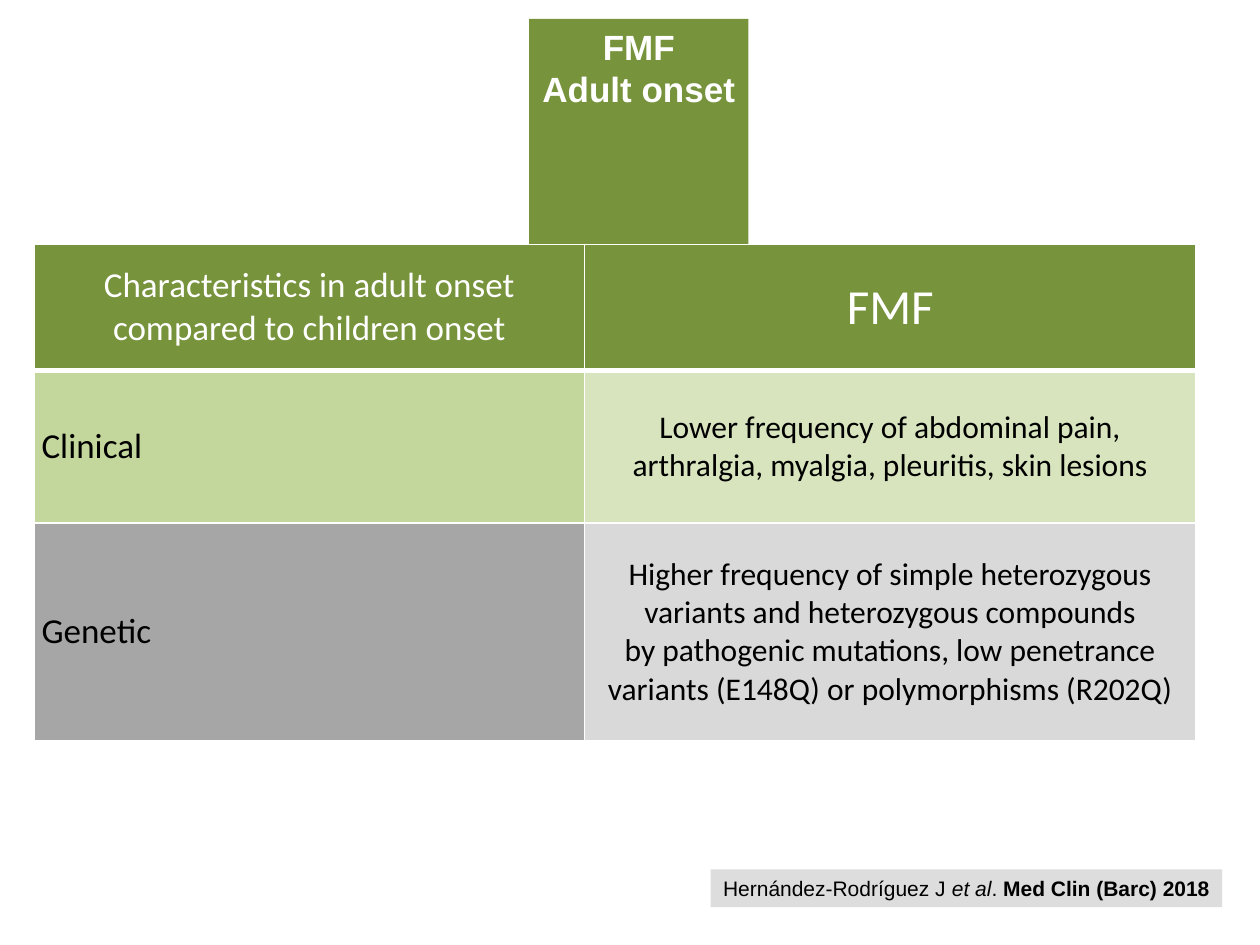
import pptx
import pptx.util
import pptx.dml.color
import pptx.enum.text
import pptx.enum.shapes
import pptx.oxml
import pptx.oxml.ns
import lxml.etree

Inches = pptx.util.Inches
Pt = pptx.util.Pt
RGBColor = pptx.dml.color.RGBColor
ALIGN = pptx.enum.text.PP_ALIGN
ANCHOR = pptx.enum.text.MSO_ANCHOR
AUTO_SIZE = pptx.enum.text.MSO_AUTO_SIZE

WHITE = RGBColor(0xFF, 0xFF, 0xFF)
BLACK = RGBColor(0, 0, 0)
GREEN = RGBColor(0x77, 0x93, 0x3C)
MID_GREEN = RGBColor(0xC3, 0xD6, 0x9B)
PALE_GREEN = RGBColor(0xD7, 0xE4, 0xBD)
MID_GRAY = RGBColor(0xA6, 0xA6, 0xA6)
PALE_GRAY = RGBColor(0xD9, 0xD9, 0xD9)
CITATION_GRAY = RGBColor(0xDD, 0xDD, 0xDD)

HEADING = "FMF\nAdult onset"
COLUMN_WIDTHS = [4.37, 4.85]
ROW_HEIGHTS = [1, 1.21, 1.73]
ROWS = [
    [("Characteristics in adult onset\ncompared to children onset", 20, WHITE, GREEN, ALIGN.CENTER),
     ("FMF", 28, WHITE, GREEN, ALIGN.CENTER)],
    [("Clinical", 20, BLACK, MID_GREEN, ALIGN.LEFT),
     ("Lower frequency of abdominal pain, arthralgia, myalgia, pleuritis, skin lesions",
      18, BLACK, PALE_GREEN, ALIGN.CENTER)],
    [("Genetic", 20, BLACK, MID_GRAY, ALIGN.LEFT),
     ("Higher frequency of simple heterozygous variants and heterozygous compounds\n"
      "by pathogenic mutations, low penetrance variants (E148Q) or polymorphisms (R202Q)",
      18, BLACK, PALE_GRAY, ALIGN.CENTER)],
]
CITATION = [
    ("Hernández-Rodríguez J ", False, False),
    ("et al", False, True),
    (". ", False, False),
    ("Med Clin (Barc) 2018", True, False),
]


def style_run(run, font_name, size, color, bold=False, italic=False):
    run.font.name = font_name
    run.font.size = Pt(size)
    run.font.color.rgb = color
    run.font.bold = bold
    run.font.italic = italic


def write_text(frame, text, font_name, size, color, alignment, bold=False):
    frame.text = text
    for paragraph in frame.paragraphs:
        paragraph.alignment = alignment
        for run in paragraph.runs:
            style_run(run, font_name, size, color, bold)


def add_borders(cell, bottom_width):
    properties = cell._tc.get_or_add_tcPr()
    widths = {"lnL": 1, "lnR": 1, "lnT": 1, "lnB": bottom_width}
    for position, (side, width) in enumerate(widths.items()):
        border = pptx.oxml.parse_xml(
            f'<a:{side} {pptx.oxml.ns.nsdecls("a")} w="{Pt(width)}">'
            f'<a:solidFill><a:srgbClr val="{WHITE}"/></a:solidFill></a:{side}>')
        properties.insert(position, border)


def add_heading(slide):
    heading = slide.shapes.title
    heading.left, heading.top = Inches(4.2), Inches(0.15)
    heading.width, heading.height = Inches(1.74), Inches(0.77)
    heading.fill.solid()
    heading.fill.fore_color.rgb = GREEN
    frame = heading.text_frame
    write_text(frame, HEADING, "Arial", 20, WHITE, ALIGN.CENTER, bold=True)
    frame.vertical_anchor = ANCHOR.TOP
    frame.word_wrap = False
    frame.auto_size = AUTO_SIZE.SHAPE_TO_FIT_TEXT


def add_comparison(slide):
    comparison = slide.shapes.add_table(
        len(ROWS), len(COLUMN_WIDTHS), Inches(0.27), Inches(1.94),
        Inches(sum(COLUMN_WIDTHS)), Inches(sum(ROW_HEIGHTS))).table
    comparison.horz_banding = False
    for column, width in zip(comparison.columns, COLUMN_WIDTHS):
        column.width = Inches(width)
    for row_index, (row, height, contents) in enumerate(zip(comparison.rows, ROW_HEIGHTS, ROWS)):
        row.height = Inches(height)
        for cell, (text, size, color, fill, alignment) in zip(row.cells, contents):
            cell.fill.solid()
            cell.fill.fore_color.rgb = fill
            cell.vertical_anchor = ANCHOR.MIDDLE
            cell.margin_left = cell.margin_right = Inches(0.06)
            cell.margin_top = cell.margin_bottom = 0
            write_text(cell.text_frame, text, "Calibri", size, color, alignment)
            add_borders(cell, 3 if row_index == 0 else 1)


def add_citation(slide):
    citation = slide.shapes.add_shape(
        pptx.enum.shapes.MSO_SHAPE.RECTANGLE,
        Inches(5.64), Inches(6.9), Inches(4.06), Inches(0.3))
    citation.shadow.inherit = False
    citation.fill.solid()
    citation.fill.fore_color.rgb = CITATION_GRAY
    citation.line.fill.background()
    frame = citation.text_frame
    frame.word_wrap = True
    frame.auto_size = AUTO_SIZE.SHAPE_TO_FIT_TEXT
    frame.vertical_anchor = ANCHOR.MIDDLE
    paragraph = frame.paragraphs[0]
    paragraph.alignment = ALIGN.RIGHT
    for text, bold, italic in CITATION:
        run = paragraph.add_run()
        run.text = text
        style_run(run, "Arial", 12, BLACK, bold, italic)


def main():
    presentation = pptx.Presentation()
    presentation.slide_width, presentation.slide_height = Inches(10), Inches(7.5)
    slide = presentation.slides.add_slide(presentation.slide_layouts.get_by_name("Title Only"))
    add_comparison(slide)
    add_heading(slide)
    add_citation(slide)
    presentation.save("out.pptx")


if __name__ == "__main__":
    main()
